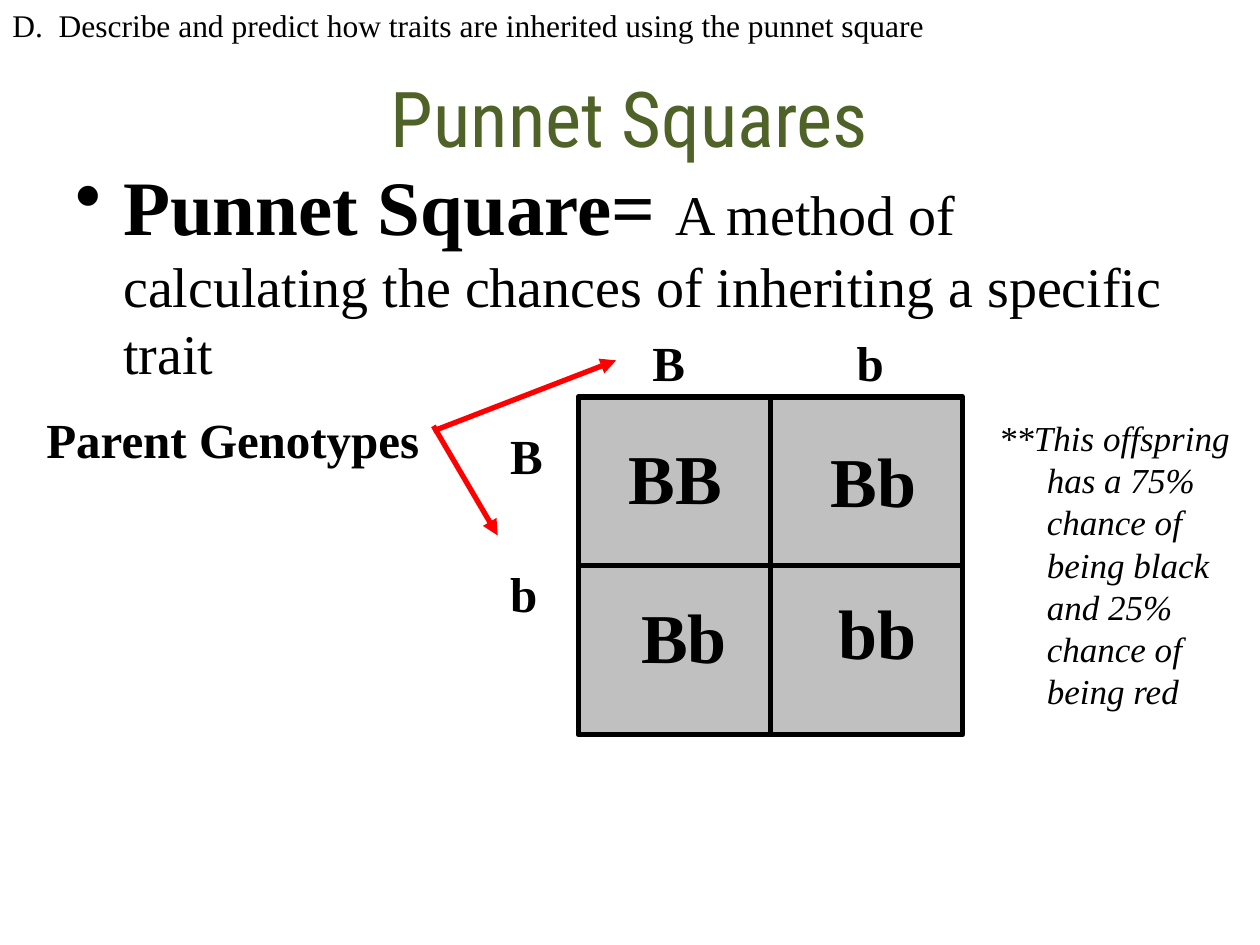
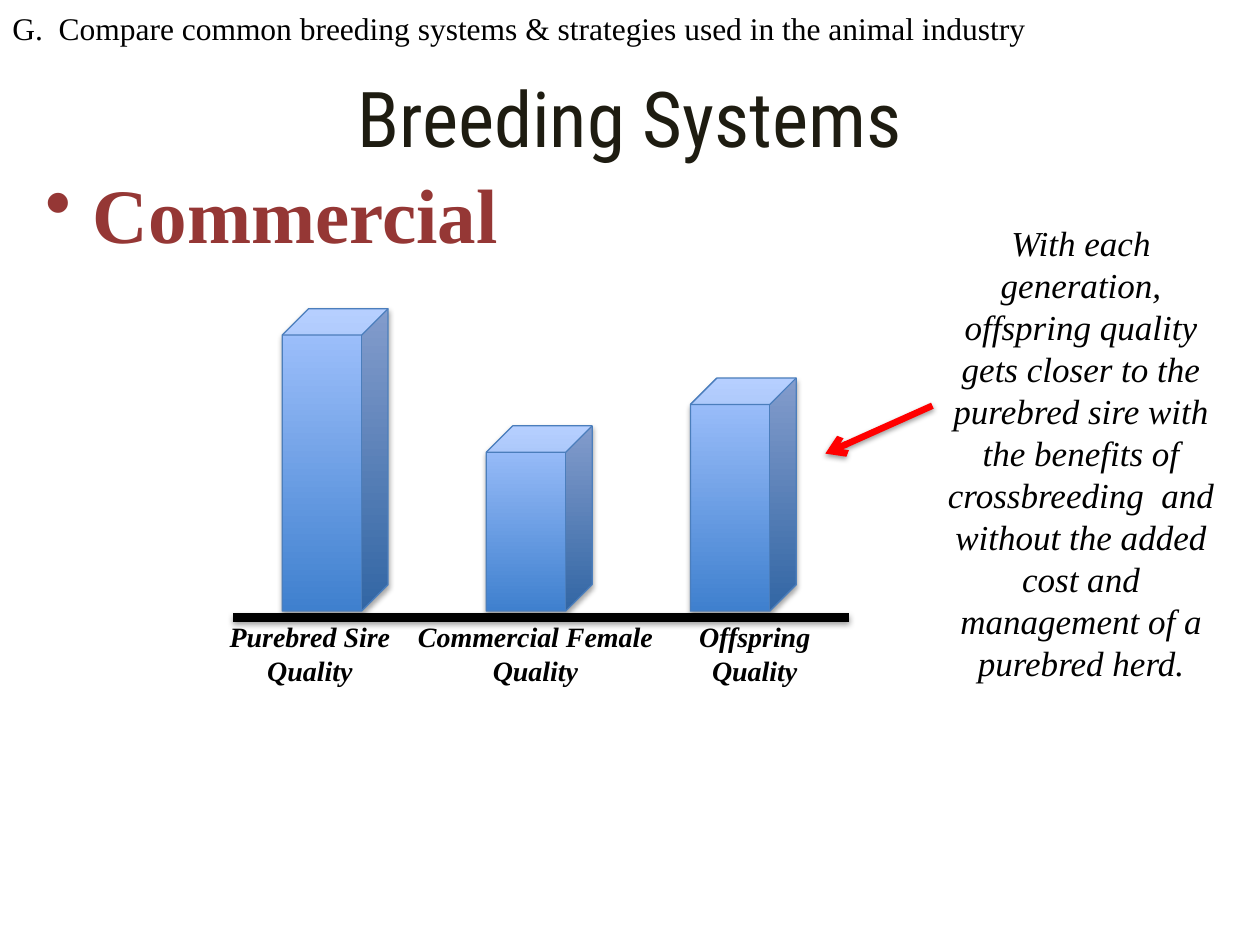
from dataclasses import dataclass
from lxml import etree
from pptx import Presentation
from pptx import util as u
from pptx.dml.color import RGBColor
from pptx.enum import shapes as es, text as et
from pptx.oxml.ns import qn


@dataclass(frozen=True)
class Theme:
    head: str = "Roboto Condensed"
    body: str = "Times New Roman"
    ink: str = "000000"
    green: str = "4F6228"
    dark: str = "1E1C11"
    brick: str = "953735"
    red: str = "FF0000"
    gray: str = "C0C0C0"
    edge: str = "4B7EBC"
    low: str = "3F80CE"
    high: str = "A4C4FF"
    title: int = 44
    gene: int = 40
    lead: int = 32
    label: int = 28
    note: int = 20
    goal: int = 18
    small: int = 16
    hang: float = 0.38


T = Theme()
WIDE, HIGH = 10, 7.5

# Content: Punnett square
GOAL_D = "D.  Describe and predict how traits are inherited using the punnet square"
TERM = [("Punnet Square= ", dict(size=T.title, bold=True)),
        ("A method of calculating the chances of inheriting a specific trait",
         dict(size=T.lead))]
ODDS = "**This offspring has a 75% chance of being black and 25% chance of being red"
SQUARE = (4.59, 3.15, 3.05, 2.68)
GENES = [  # text, column, row, inset in the cell
    ("BB", 0, 0, 0.3, 0.25), ("Bb", 1, 0, 0.38, 0.27),
    ("Bb", 0, 1, 0.4, 0.17), ("bb", 1, 1, 0.44, 0.14)]
ALLELES = ["B", "b"]
RAYS = [((3.44, 3.42), (4.89, 2.86)), ((3.44, 3.38), (3.95, 4.25))]

# Content: breeding systems
GOAL_G = "G.  Compare common breeding systems & strategies used in the animal industry"
CLAIM = ("With each generation, offspring quality gets closer to the purebred sire "
         "with the benefits of crossbreeding  and without the added cost and "
         "management of a purebred herd.")
BARS = [  # label, bar height, label left, label width
    ("Purebred Sire Quality", 2.4, 1.61, 1.7),
    ("Commercial Female Quality", 1.47, 3.21, 2.08),
    ("Offspring\nQuality", 1.85, 5.14, 1.7)]
BAR_X, BAR_W, STEP, BASE = 2.24, 0.84, 1.62, 4.85


def tint(code):
    return RGBColor.from_string(code)


def style(run, size=T.label, font=T.body, color=T.ink, bold=False, ital=False):
    f = run.font
    f.size, f.name, f.bold, f.italic = u.Pt(size), font, bold, ital
    f.color.rgb = tint(color)


def fill_text(frame, text, mid=False, hang=False, dot=False, **fmt):
    """Write a string, or a list of (string, format) runs, into a frame."""
    frame.word_wrap = True
    frame.auto_size = et.MSO_AUTO_SIZE.NONE
    paras = [text] if isinstance(text, list) else [[(t, {})] for t in text.split("\n")]
    for i, runs in enumerate(paras):
        p = frame.add_paragraph() if i else frame.paragraphs[0]
        p.alignment = et.PP_ALIGN.CENTER if mid else et.PP_ALIGN.LEFT
        if hang:
            props = p._p.get_or_add_pPr()
            props.set("marL", str(u.Inches(T.hang)))
            props.set("indent", str(-u.Inches(T.hang)))
            if dot:
                etree.SubElement(props, qn("a:buChar")).set("char", "•")
        for part, own in runs:
            run = p.add_run()
            run.text = part
            style(run, **{**fmt, **own})


def write(slide, text, x, y, w, h, **fmt):
    box = slide.shapes.add_textbox(*map(u.Inches, (x, y, w, h)))
    fill_text(box.text_frame, text, **fmt)


def effects(shape, alpha=0, dist=1.6):
    """Give the shape a soft drop shadow, or none when alpha is 0."""
    props = shape._element.spPr
    for old in props.findall(qn("a:effectLst")):
        props.remove(old)
    box = etree.SubElement(props, qn("a:effectLst"))
    if alpha:
        cast = etree.SubElement(box, qn("a:outerShdw"), blurRad=str(u.Pt(3.1)),
                                dist=str(u.Pt(dist)), dir="5400000", rotWithShape="0")
        color = etree.SubElement(cast, qn("a:srgbClr"), val=T.ink)
        etree.SubElement(color, qn("a:alpha"), val=str(alpha * 1000))


def line(slide, start, end, color=T.ink, width=3, tip=None, alpha=0):
    link = slide.shapes.add_connector(es.MSO_CONNECTOR.STRAIGHT,
                                      *map(u.Inches, (*start, *end)))
    link.line.color.rgb = tint(color)
    link.line.width = u.Pt(width)
    if tip:
        etree.SubElement(link.line._get_or_add_ln(), qn("a:tailEnd"), type=tip)
    effects(link, alpha)
    return link


def start(deck, title, color, goal, top=0):
    """Add a slide with its title and the learning goal above it."""
    slide = deck.slides.add_slide(deck.slide_layouts[5])
    head = slide.shapes.title
    head.left, head.top, head.width, head.height = map(
        u.Inches, (0.05 * WIDE, 0.04 * HIGH, 0.9 * WIDE, 1.25))
    head.text_frame.vertical_anchor = et.MSO_ANCHOR.MIDDLE
    fill_text(head.text_frame, title, mid=True, size=T.title, font=T.head, color=color)
    write(slide, goal, 0, top, 0.95 * WIDE, 0.4, size=T.goal)
    return slide


def punnet(deck):
    slide = start(deck, "Punnet Squares", T.green, GOAL_D)
    write(slide, TERM, 0.5, 1.21, 9, 1.95, hang=True, dot=True)

    # Square and its dividing lines
    x, y, w, h = SQUARE
    square = slide.shapes.add_shape(es.MSO_SHAPE.RECTANGLE, *map(u.Inches, SQUARE))
    square.shadow.inherit = False
    square.fill.solid()
    square.fill.fore_color.rgb = tint(T.gray)
    square.line.color.rgb = tint(T.ink)
    square.line.width = u.Pt(3.25)
    for a, b in ((1, 3), (2, 0)):
        rule = line(slide, (x, y), (x + w, y + h))
        rule.begin_connect(square, a)
        rule.end_connect(square, b)

    # Offspring and parent alleles
    for gene, col, row, dx, dy in GENES:
        write(slide, gene, x + col * w / 2 + dx, y + row * h / 2 + dy, 1, 0.83,
              size=T.gene, bold=True)
    for i, gene in enumerate(ALLELES):
        write(slide, gene, 5.08 + i * 1.62, 2.59, 0.5, 0.55, bold=True)
        write(slide, gene, 3.95, 3.33 + i * 1.09, 0.5, 0.55, bold=True)

    # Parent label, arrows and side note
    write(slide, "Parent Genotypes", 0.27, 3.2, 3.3, 0.55, bold=True)
    for tail, tip in RAYS:
        line(slide, tail, tip, color=T.red, tip="triangle")
    write(slide, ODDS, 7.83, 3.26, 2.17, 3.09, hang=True, size=T.note, ital=True)


def breeding(deck):
    slide = start(deck, "Breeding Systems", T.dark, GOAL_G, top=0.02)
    write(slide, "Commercial", 0.26, 1.27, 6.5, 0.9, hang=True, dot=True,
          size=T.title, color=T.brick, bold=True)

    # Bars with their labels
    line(slide, (1.85, 4.9), (6.74, 4.9), width=5, alpha=38)
    for i, (label, tall, left, wide) in enumerate(BARS):
        bar = slide.shapes.add_shape(es.MSO_SHAPE.CUBE, *map(
            u.Inches, (BAR_X + i * STEP, BASE - tall, BAR_W, tall)))
        bar.fill.gradient()
        bar.fill.gradient_angle = 90
        for stop, color in zip(bar.fill.gradient_stops, (T.low, T.high)):
            stop.color.rgb = tint(color)
        bar.line.color.rgb = tint(T.edge)
        bar.line.width = u.Pt(0.75)
        effects(bar, alpha=35, dist=1.8)
        write(slide, label, left, 4.87, wide, 0.64, mid=True,
              size=T.small, bold=True, ital=True)

    # Claim and its arrow
    write(slide, CLAIM, 7.4, 1.71, 2.36, 3.8, mid=True, size=T.note, ital=True)
    line(slide, (7.4, 3.22), (6.55, 3.6), color=T.red, width=3.75, tip="arrow", alpha=38)


def main():
    deck = Presentation()
    deck.slide_width, deck.slide_height = u.Inches(WIDE), u.Inches(HIGH)
    punnet(deck)
    breeding(deck)
    deck.save("out.pptx")


if __name__ == "__main__":
    main()
